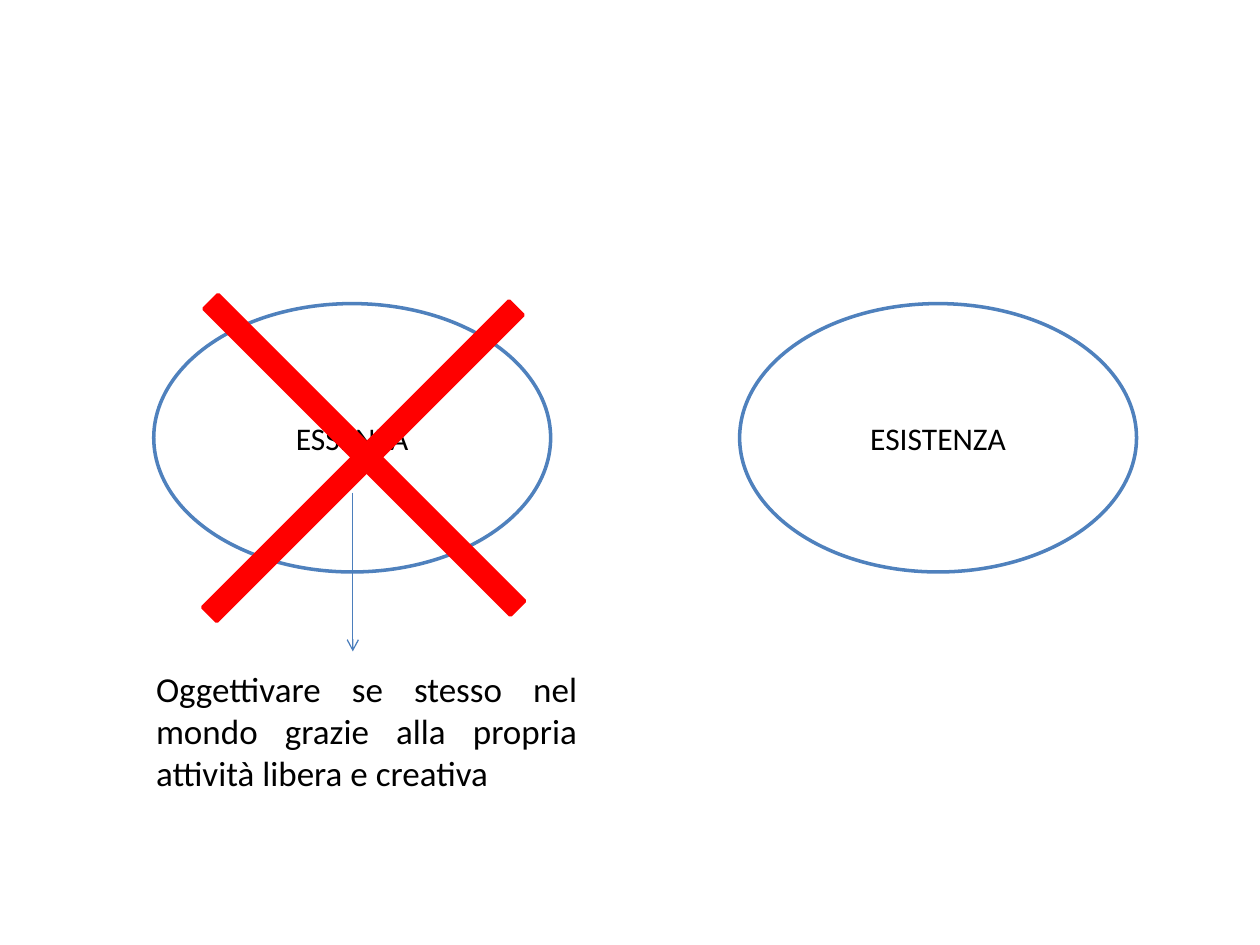
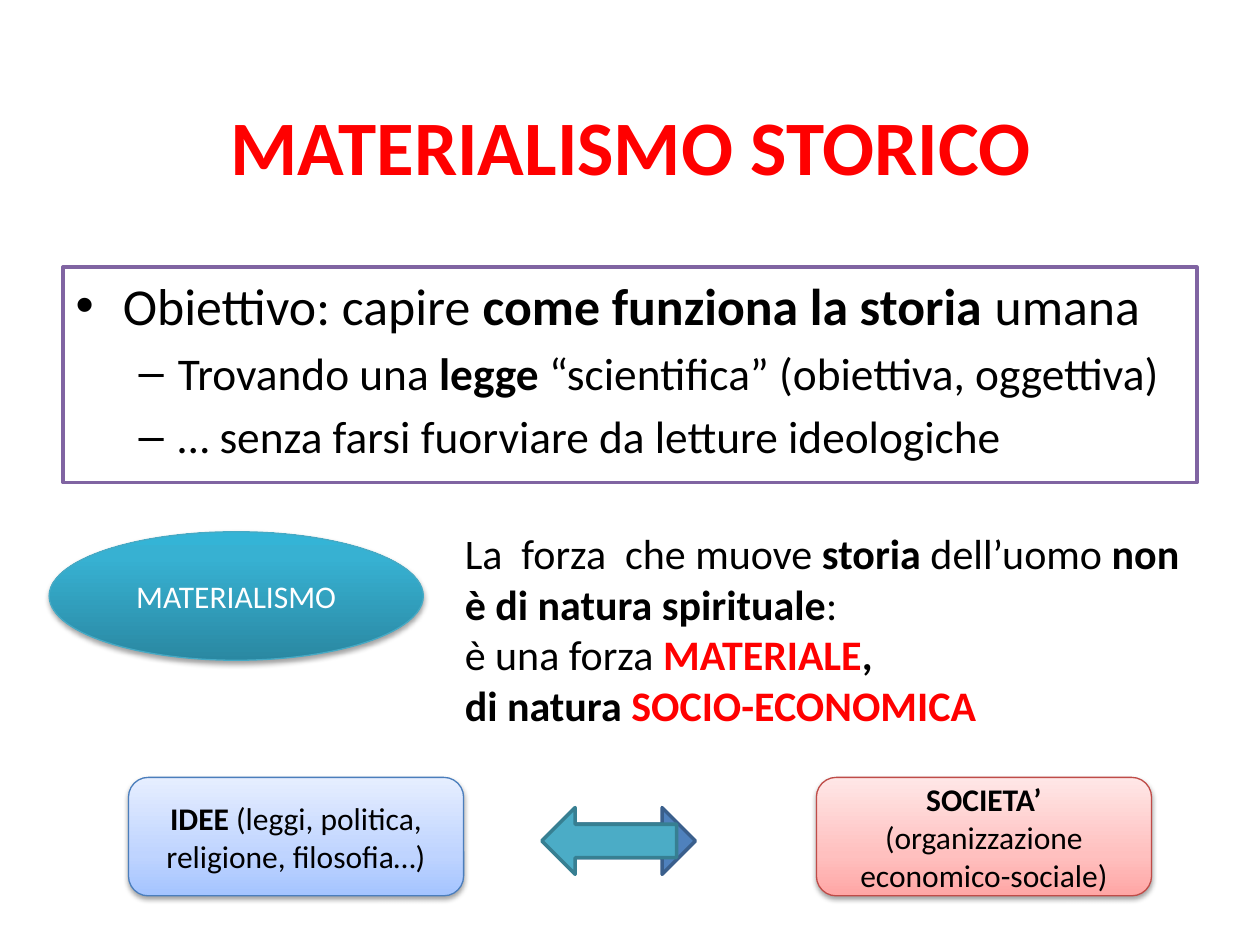
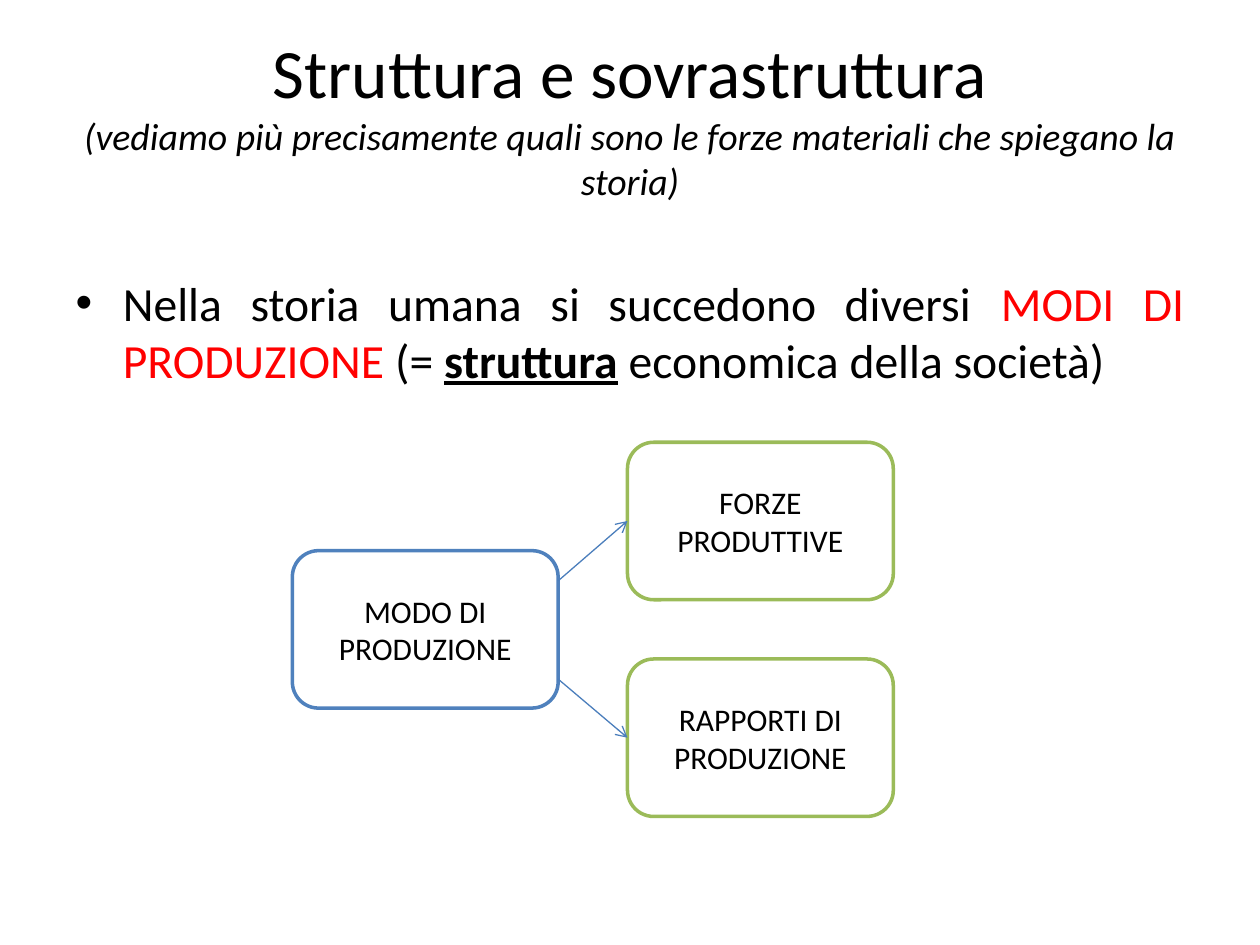
"""Build three slides on essence, historical materialism and modes of production."""
from copy import deepcopy

from lxml.etree import SubElement
from pptx import Presentation
from pptx.dml.color import RGBColor
from pptx.enum.shapes import MSO_CONNECTOR, MSO_SHAPE
from pptx.enum.text import MSO_ANCHOR, MSO_AUTO_SIZE, PP_ALIGN
from pptx.oxml.ns import qn
from pptx.util import Inches, Pt

COLORS = {
    "black": "000000", "white": "FFFFFF", "red": "FF0000", "blue": "4F81BD",
    "arrow": "4B7EBC", "purple": "8064A2", "green": "9BBB59", "aqua": "4BACC6",
    "blue edge": "3A5F8C", "aqua edge": "377F92", "oval edge": "46AAC5",
    "rose edge": "BF4C48",
}
RGB = {name: RGBColor.from_string(value) for name, value in COLORS.items()}
OVAL_SHADES = [(0, "2A88A2"), (0.8, "37B1D2"), (1, "34B4D6")]
IDEAS_SHADES = [(0, "A4C4FF"), (0.35, "BFD4FF"), (1, "E6EEFF")]
SOCIETY_SHADES = [(0, "FFA6A5"), (0.35, "FFC0BF"), (1, "FFE7E7")]


def write(shape, *paragraphs, size=18, color="black", bold=None, align=None,
          anchor=MSO_ANCHOR.MIDDLE):
    frame = shape.text_frame
    frame.word_wrap = True
    frame.auto_size = MSO_AUTO_SIZE.NONE
    frame.vertical_anchor = anchor
    for index, pieces in enumerate(paragraphs):
        paragraph = frame.add_paragraph() if index else frame.paragraphs[0]
        paragraph.alignment = align
        for piece in [pieces] if isinstance(pieces, str) else pieces:
            text, changes = (piece, {}) if isinstance(piece, str) else piece
            run = paragraph.add_run()
            run.text = text
            run.font.name = "Calibri"
            run.font.size = Pt(changes.get("size", size))
            run.font.bold = changes.get("bold", bold)
            run.font.italic = changes.get("italic")
            run.font.underline = changes.get("underline")
            run.font.color.rgb = RGB[changes.get("color", color)]


def add_figure(slide, preset, at, edge, fill="white", shades=None, width=2):
    figure = slide.shapes.add_shape(preset, *map(Inches, at))
    figure.shadow.inherit = False
    figure.line.color.rgb = RGB[edge]
    figure.line.width = Pt(width)
    if not shades:
        figure.fill.solid()
        figure.fill.fore_color.rgb = RGB[fill]
        return figure
    figure.fill.gradient()
    figure.fill.gradient_angle = 90
    properties = figure.element.spPr
    stops = properties.find(qn("a:gradFill")).find(qn("a:gsLst"))
    stops.append(deepcopy(stops[0]))
    for stop, (position, shade) in zip(figure.fill.gradient_stops, shades):
        stop.position = position
        stop.color.rgb = RGBColor.from_string(shade)
    shadow = SubElement(properties.find(qn("a:effectLst")), qn("a:outerShdw"),
                        blurRad=str(Pt(3.1)), dist=str(Pt(1.7)), dir="5400000",
                        rotWithShape="0")
    black = SubElement(shadow, qn("a:srgbClr"), val=COLORS["black"])
    SubElement(black, qn("a:alpha"), val="37000")
    return figure


deck = Presentation()
deck.slide_width, deck.slide_height = Inches(10), Inches(7.5)
content_layout, blank_layout = deck.slide_layouts[1], deck.slide_layouts[6]
strong = {"bold": True}
red_strong = {"bold": True, "color": "red"}

essence = deck.slides.add_slide(blank_layout)
for left, concept in [(1.22, "ESSENZA"), (5.87, "ESISTENZA")]:
    oval = add_figure(essence, MSO_SHAPE.OVAL, (left, 2.41, 3.15, 2.13), "blue")
    write(oval, concept, align=PP_ALIGN.CENTER)
explanation = essence.shapes.add_textbox(*map(Inches, (1.14, 5.25, 3.54, 1.11)))
write(explanation,
      "Oggettivare se stesso nel mondo grazie alla propria attività libera e creativa",
      size=20, align=PP_ALIGN.JUSTIFY, anchor=MSO_ANCHOR.TOP)
for left, top, angle in [(2.81, 1.89, 135), (2.8, 1.94, 45)]:
    cross_bar = add_figure(essence, MSO_SHAPE.RECTANGLE, (left, top, 0.16, 3.44),
                           "red", fill="red")
    cross_bar.rotation = angle

materialism = deck.slides.add_slide(content_layout)
structure = deck.slides.add_slide(content_layout)
for slide, title_at, goal_height in [(materialism, (0.51, 0.52, 9, 1.25), 1.71),
                                     (structure, (0.5, 0.3, 9, 1.25), 1.01)]:
    for holder, at in zip(slide.placeholders, [title_at, (0.5, 2.12, 9, goal_height)]):
        holder.left, holder.top, holder.width, holder.height = map(Inches, at)

write(materialism.shapes.title, "MATERIALISMO STORICO", size=44, color="red", bold=True)
goal = materialism.placeholders[1]
goal.fill.solid()
goal.fill.fore_color.rgb = RGB["white"]
goal.line.color.rgb = RGB["purple"]
goal.line.width = Pt(2)
sub = {"size": 25.9}
write(goal,
      ["Obiettivo: capire ", ("come funziona la storia ", strong), "umana"],
      [("Trovando una ", sub), ("legge", sub | strong),
       (" “scientifica” (obiettiva, oggettiva)", sub)],
      [("… senza farsi fuorviare da letture ideologiche", sub)],
      size=29.6, anchor=MSO_ANCHOR.TOP)
for detail in goal.text_frame.paragraphs[1:]:
    detail.level = 1

doctrine = add_figure(materialism, MSO_SHAPE.OVAL, (0.39, 4.22, 2.97, 1.02),
                      "oval edge", shades=OVAL_SHADES, width=0.75)
write(doctrine, "MATERIALISMO", color="white", align=PP_ALIGN.CENTER)
force = materialism.shapes.add_textbox(*map(Inches, (3.59, 4.14, 6.02, 1.72)))
write(force,
      ["La  forza  che muove", (" storia", strong), " dell’uomo ",
       ("non è di natura spirituale", strong), ":"],
      ["è una forza ", ("MATERIALE", red_strong), (",", strong)],
      [("di natura ", strong), ("SOCIO-ECONOMICA", red_strong)],
      size=24, anchor=MSO_ANCHOR.TOP)
for left, edge, shades, heading, examples in [
        (1.02, "arrow", IDEAS_SHADES, "IDEE", " (leggi, politica, religione, filosofia…)"),
        (6.48, "rose edge", SOCIETY_SHADES, "SOCIETA’",
         " (organizzazione economico-sociale)")]:
    side = add_figure(materialism, MSO_SHAPE.ROUNDED_RECTANGLE, (left, 6.17, 2.66, 0.94),
                      edge, shades=shades, width=0.75)
    write(side, [(heading, strong), examples], align=PP_ALIGN.CENTER)
for preset, left, color in [(MSO_SHAPE.RIGHT_ARROW, 4.45, "blue"),
                            (MSO_SHAPE.LEFT_ARROW, 4.3, "aqua")]:
    add_figure(materialism, preset, (left, 6.41, 1.07, 0.53), f"{color} edge", fill=color)

write(structure.shapes.title, "Struttura e sovrastruttura",
      [("(vediamo più precisamente quali sono le forze materiali che spiegano la storia)",
        {"size": 21.6, "italic": True})], size=39.6)
write(structure.placeholders[1],
      ["Nella storia umana si succedono diversi ", ("MODI DI PRODUZIONE", {"color": "red"}),
       " (= ", ("struttura", {"bold": True, "underline": True}),
       " economica della società)"],
      size=27.2, align=PP_ALIGN.JUSTIFY, anchor=MSO_ANCHOR.TOP)
arrows = [(essence, (2.8, 3.91), (2.8, 5.17), None)]
for left, top, edge, label, arrow_start in [
        (2.32, 4.37, "blue", "MODO DI PRODUZIONE", None),
        (4.98, 3.51, "green", "FORZE PRODUTTIVE", 4.61),
        (4.98, 5.23, "green", "RAPPORTI DI PRODUZIONE", 5.39)]:
    factor = add_figure(structure, MSO_SHAPE.ROUNDED_RECTANGLE, (left, top, 2.11, 1.25), edge)
    write(factor, label, align=PP_ALIGN.CENTER)
    if arrow_start:
        arrows.append((structure, (4.43, arrow_start), (left, top + 0.63), factor))

for slide, start, end, target in arrows:
    arrow = slide.shapes.add_connector(MSO_CONNECTOR.STRAIGHT, *map(Inches, start + end))
    if target:
        arrow.end_connect(target, 1)
    arrow.line.color.rgb = RGB["arrow"]
    arrow.line.width = Pt(0.75)
    SubElement(arrow.get_or_add_ln(), qn("a:tailEnd"), type="arrow")
    SubElement(arrow.element.spPr, qn("a:effectLst"))

deck.save("out.pptx")
